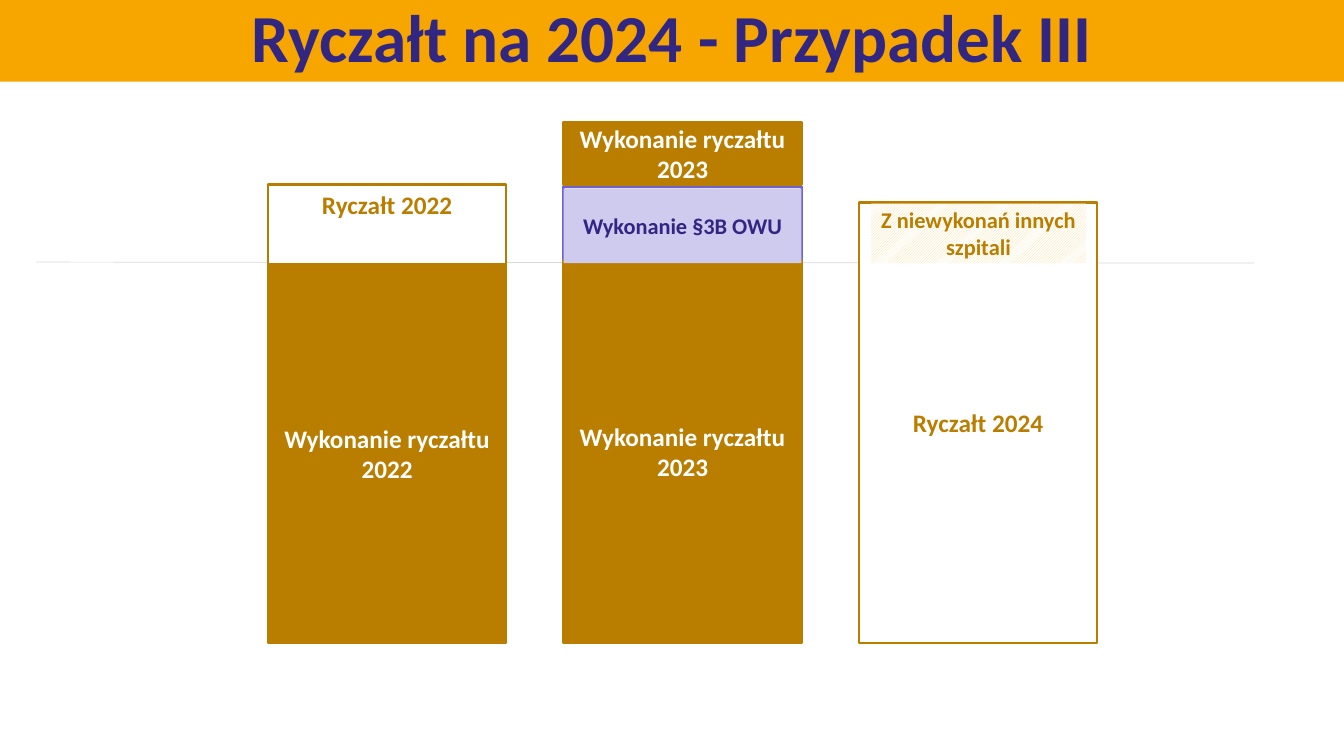
from pptx import Presentation
from pptx.dml.color import RGBColor
from pptx.enum.dml import MSO_PATTERN
from pptx.enum.shapes import MSO_CONNECTOR, MSO_SHAPE
from pptx.enum.text import MSO_ANCHOR, PP_ALIGN
from pptx.util import Pt
from lxml.etree import SubElement
from pptx.oxml.ns import qn

PX = 9144
BROWN, WHITE, NAVY = "B97D00", "FFFFFF", "312783"
BAR_WIDTH, BAR_BOTTOM, BASELINE = 236, 638, 261
BAR_2022, BAR_2023, BAR_2024 = (266 + 293 * i for i in range(3))


def color(value):
    return RGBColor.from_string(value)


def add_box(text, left, top, width, bottom, fill=None, line=None, size=18,
            ink=WHITE, anchor=MSO_ANCHOR.MIDDLE, spacing=None):
    box = page.shapes.add_shape(MSO_SHAPE.RECTANGLE, left * PX, top * PX,
                                width * PX, (bottom - top) * PX)
    box.shadow.inherit = False
    if fill:
        box.fill.solid()
        box.fill.fore_color.rgb = color(fill)
    if line:
        box.line.color.rgb = color(line)
        box.line.width = Pt(1.75)
    else:
        box.line.fill.background()
    if text:
        frame = box.text_frame
        frame.word_wrap = True
        frame.vertical_anchor = anchor
        para = frame.paragraphs[0]
        para.alignment = PP_ALIGN.CENTER
        para.line_spacing = spacing
        span = para.add_run()
        span.text = text
        span.font.name = "Calibri"
        span.font.size = Pt(size)
        span.font.bold = True
        span.font.color.rgb = color(ink)
    return box


deck = Presentation()
deck.slide_width, deck.slide_height = 1333 * PX, 750 * PX
page = deck.slides.add_slide(deck.slide_layouts[6])

level = page.shapes.add_connector(MSO_CONNECTOR.STRAIGHT, 36 * PX, 260 * PX,
                                  1244 * PX, BASELINE * PX)
level.line.color.rgb = color("D9D9D9")
level.line.width = Pt(0.5)
SubElement(level._element.spPr, qn("a:effectLst"))

add_box("Ryczałt na 2024 - Przypadek III", 0, 0, 1333, 81, "F7A600",
        size=48, ink=NAVY, spacing=0.9)

add_box("Ryczałt 2022", BAR_2022, 183, BAR_WIDTH, BAR_BOTTOM, WHITE, "B77B00",
        ink=BROWN, anchor=MSO_ANCHOR.TOP)
add_box("Wykonanie ryczałtu 2022", BAR_2022, BASELINE, BAR_WIDTH, BAR_BOTTOM, BROWN)

add_box("", BAR_2023, 185, BAR_WIDTH, BASELINE, WHITE, "6E62D0")
for top, bottom in ((258, BAR_BOTTOM), (121, 183)):
    add_box("Wykonanie ryczałtu 2023", BAR_2023, top, BAR_WIDTH, bottom, BROWN, BROWN)
add_box("Wykonanie §3B OWU", BAR_2023, 187, BAR_WIDTH, BASELINE, "CFCBEF",
        size=16, ink=NAVY)

add_box("Ryczałt 2024", BAR_2024, 201, BAR_WIDTH, BAR_BOTTOM, WHITE, BROWN, ink=BROWN)
unused = add_box("Z niewykonań innych szpitali", 864, 202, 213, BASELINE,
                 size=16, ink=BROWN)
unused.fill.patterned()
unused.fill.pattern = MSO_PATTERN.DARK_UPWARD_DIAGONAL
unused.fill.fore_color.rgb = color("FFDD96")
unused.fill.back_color.rgb = color(WHITE)

deck.save("out.pptx")
